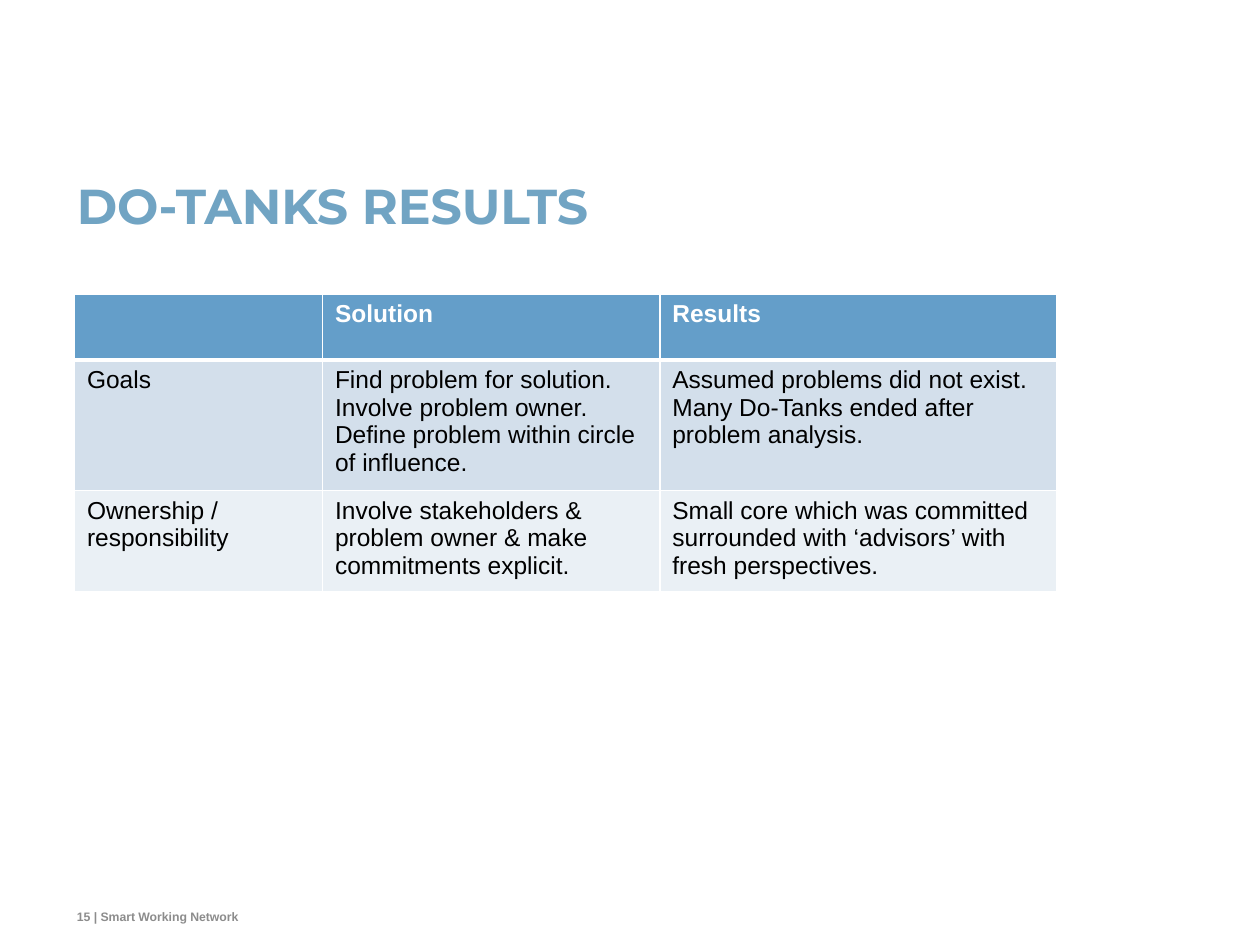
from lxml.etree import SubElement
from pptx import Presentation
from pptx.dml.color import RGBColor
from pptx.enum.text import MSO_ANCHOR as Anchor
from pptx.oxml.ns import qn
from pptx.util import Cm, Pt

WHITE = RGBColor(0xFF, 0xFF, 0xFF)
BLACK = RGBColor(0x00, 0x00, 0x00)
TITLE_BLUE = RGBColor(0x71, 0xA4, 0xC3)
FOOTER_GREY = RGBColor(0x8C, 0x8C, 0x8C)
HEADER_BLUE = RGBColor(0x64, 0x9E, 0xC9)
ROW_BLUES = [RGBColor(0xD3, 0xDF, 0xEB), RGBColor(0xEA, 0xF0, 0xF5)]

COLUMN_WIDTHS = [5, 6.8, 8]
ROW_HEIGHTS = [1.33, 2.47, 1.91]
ROWS = [
    ["", "Solution", "Results"],
    [
        "Goals",
        "Find problem for solution.\nInvolve problem owner.\n"
        "Define problem within circle of influence.",
        "Assumed problems did not exist. Many Do-Tanks ended after problem analysis.",
    ],
    [
        "Ownership / responsibility",
        "Involve stakeholders & problem owner & make commitments explicit.",
        "Small core which was committed surrounded with ‘advisors’ with fresh perspectives.",
    ],
]


def format_text(text_frame, font_name, size, color, bold):
    for paragraph in text_frame.paragraphs:
        for run in paragraph.runs:
            run.font.name = font_name
            run.font.size = Pt(size)
            run.font.color.rgb = color
            run.font.bold = bold


def add_label(slide, text, left, top, width, height, anchor):
    shape = slide.shapes.add_textbox(Cm(left), Cm(top), Cm(width), Cm(height))
    text_frame = shape.text_frame
    text_frame.margin_left = text_frame.margin_right = 0
    text_frame.margin_top = text_frame.margin_bottom = 0
    text_frame.word_wrap = True
    text_frame.vertical_anchor = anchor
    text_frame.text = text
    return text_frame


def set_borders(cell, bottom_width):
    properties = cell._tc.get_or_add_tcPr()
    widths = {"a:lnL": 1, "a:lnR": 1, "a:lnT": 1, "a:lnB": bottom_width}
    for tag, width in widths.items():
        line = SubElement(properties, qn(tag), w=str(Pt(width)))
        fill = SubElement(line, qn("a:solidFill"))
        SubElement(fill, qn("a:srgbClr"), val=str(WHITE))


def fill_cell(cell, text, is_header, background):
    set_borders(cell, 3 if is_header else 1)
    cell.fill.solid()
    cell.fill.fore_color.rgb = background
    cell.text_frame.text = text
    format_text(cell.text_frame, "Arial", 14, WHITE if is_header else BLACK, is_header)


def add_results_table(slide, left, top):
    frame = slide.shapes.add_table(
        len(ROWS), len(COLUMN_WIDTHS), Cm(left), Cm(top),
        Cm(sum(COLUMN_WIDTHS)), Cm(sum(ROW_HEIGHTS)),
    )
    table = frame.table
    for column, width in zip(table.columns, COLUMN_WIDTHS):
        column.width = Cm(width)
    for row, height in zip(table.rows, ROW_HEIGHTS):
        row.height = Cm(height)
    for row_index, (texts, background) in enumerate(zip(ROWS, [HEADER_BLUE, *ROW_BLUES])):
        for column_index, text in enumerate(texts):
            fill_cell(table.cell(row_index, column_index), text, row_index == 0, background)


def main():
    presentation = Presentation()
    presentation.slide_width = Cm(25.4)
    presentation.slide_height = Cm(19.05)
    slide = presentation.slides.add_slide(presentation.slide_layouts[6])

    title = add_label(slide, "DO-TANKS RESULTS", 1.55, 3.73, 22.38, 2, Anchor.TOP)
    title.paragraphs[0].line_spacing = Pt(28)
    format_text(title, "Montserrat", 28, TITLE_BLUE, True)

    footer = add_label(
        slide, "15 | Smart Working Network", 1.55, 18.14, 12, 0.48, Anchor.BOTTOM
    )
    format_text(footer, "Arial", 7, FOOTER_GREY, True)

    add_results_table(slide, 1.5, 5.93)
    presentation.save("out.pptx")


if __name__ == "__main__":
    main()
